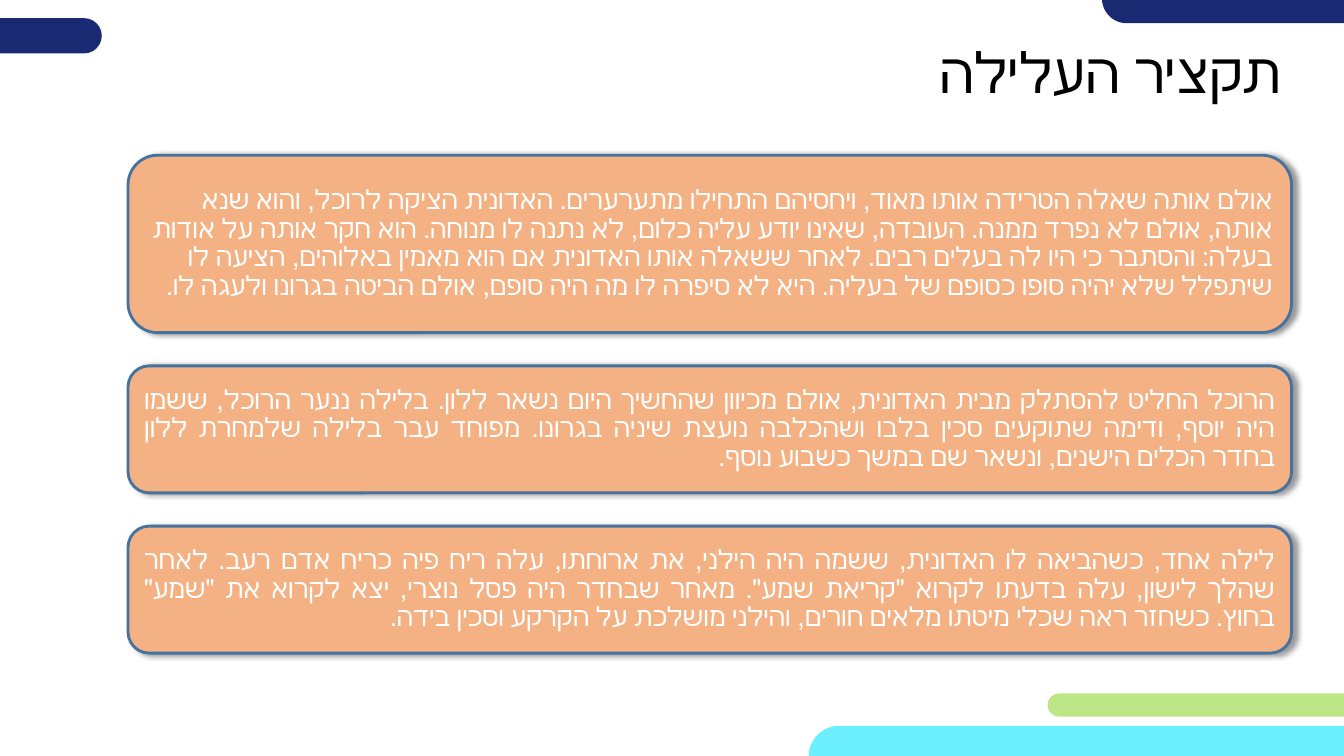
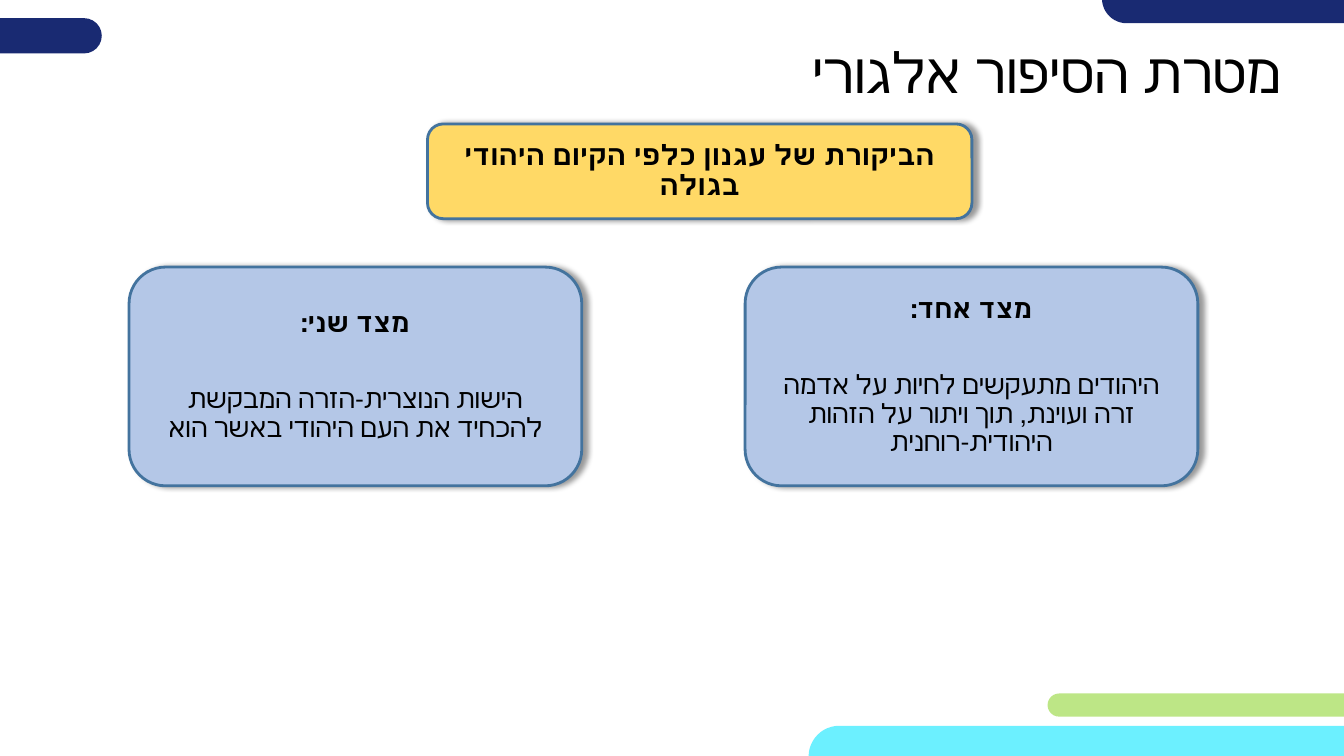
from dataclasses import dataclass

from lxml.etree import SubElement
from pptx import Presentation
from pptx.dml.color import RGBColor
from pptx.enum.lang import MSO_LANGUAGE_ID
from pptx.enum.shapes import MSO_SHAPE
from pptx.enum.text import MSO_ANCHOR, MSO_AUTO_SIZE, PP_ALIGN
from pptx.oxml.ns import qn
from pptx.util import Emu, Pt

EMU_PER_PX = 9144  # 100 px to the inch
TITLE_ONLY = 5


@dataclass(frozen=True)
class Theme:
    font: str = "Quicksand"
    title_size: int = 40
    lead_size: int = 20
    body_size: int = 19
    line_spacing: float = 0.9
    heading_gap: int = 34
    outline_width: int = 2
    black: str = "000000"
    white: str = "FFFFFF"
    navy: str = "192A72"
    cyan: str = "6CF0FF"
    green: str = "BDE686"
    outline: str = "43739E"
    orange: str = "F4B183"
    yellow: str = "FFD966"
    blue: str = "B4C7E7"


THEME = Theme()
TITLE_AREA = (767, 36, 514, 78)
BANDS = (
    (802, 720, 583, 61, THEME.cyan),
    (1039, 688, 334, 23, THEME.green),
    (1093, -26, 303, 49, THEME.navy),
    (-55, 18, 156, 35, THEME.navy),
)


def px(length):
    return Emu(length * EMU_PER_PX)


def write(paragraph, text, *, size=THEME.body_size, color=THEME.black,
          bold=False, align=PP_ALIGN.CENTER, space_after=0):
    """Write one right-to-left paragraph."""
    paragraph._p.get_or_add_pPr().set("rtl", "1")
    paragraph.alignment = align
    paragraph.line_spacing = THEME.line_spacing
    paragraph.space_before = Pt(0)
    paragraph.space_after = Pt(space_after)
    run = paragraph.add_run()
    run.text = text
    font = run.font
    font.name = THEME.font
    font.size = Pt(size)
    font.bold = bold
    font.color.rgb = RGBColor.from_string(color)
    font.language_id = MSO_LANGUAGE_ID.HEBREW


def add_shadow(shape):
    effects = shape._element.spPr.find(qn("a:effectLst"))
    shadow = SubElement(effects, qn("a:outerShdw"), blurRad=str(Pt(4)),
                        dist=str(Pt(3)), dir="0", algn="l", rotWithShape="0")
    color = SubElement(shadow, qn("a:srgbClr"), val=THEME.black)
    SubElement(color, qn("a:alpha"), val="40000")


class Deck:
    def __init__(self):
        self.presentation = Presentation()
        self.presentation.slide_width = px(1333)
        self.presentation.slide_height = px(750)
        self.slide = None

    def add_slide(self, title):
        layout = self.presentation.slide_layouts[TITLE_ONLY]
        self.slide = self.presentation.slides.add_slide(layout)
        self.title(title)
        for left, top, width, height, fill in BANDS:
            band = self.rounded(left, top, width, height, fill)
            band.adjustments[0] = 0.5
            band.line.fill.background()

    def title(self, text):
        shape = self.slide.shapes.title
        shape.left, shape.top, shape.width, shape.height = map(px, TITLE_AREA)
        frame = shape.text_frame
        frame.word_wrap = True
        frame.auto_size = MSO_AUTO_SIZE.NONE
        frame.vertical_anchor = MSO_ANCHOR.MIDDLE
        write(frame.paragraphs[0], text, size=THEME.title_size,
              align=PP_ALIGN.RIGHT)

    def rounded(self, left, top, width, height, fill):
        shape = self.slide.shapes.add_shape(
            MSO_SHAPE.ROUNDED_RECTANGLE, *map(px, (left, top, width, height)))
        shape.shadow.inherit = False
        shape.fill.solid()
        shape.fill.fore_color.rgb = RGBColor.from_string(fill)
        return shape

    def card(self, left, top, width, height, fill):
        """Add an outlined box with a shadow and return its text frame."""
        shape = self.rounded(left, top, width, height, fill)
        shape.line.color.rgb = RGBColor.from_string(THEME.outline)
        shape.line.width = Pt(THEME.outline_width)
        add_shadow(shape)
        frame = shape.text_frame
        frame.word_wrap = True
        frame.vertical_anchor = MSO_ANCHOR.MIDDLE
        return frame

    def save(self):
        self.presentation.save("out.pptx")


# Plot summary: three stacked cards
PLOT_CARDS = (
    (176, PP_ALIGN.RIGHT,
     "אולם אותה שאלה הטרידה אותו מאוד, ויחסיהם התחילו מתערערים. "
     "האדונית הציקה לרוכל, והוא שנא אותה, אולם לא נפרד ממנה. "
     "העובדה, שאינו יודע עליה כלום, לא נתנה לו מנוחה. "
     "הוא חקר אותה על אודות בעלה: והסתבר כי היו לה בעלים רבים. "
     "לאחר ששאלה אותו האדונית אם הוא מאמין באלוהים, הציעה לו "
     "שיתפלל שלא יהיה סופו כסופם של בעליה. "
     "היא לא סיפרה לו מה היה סופם, אולם הביטה בגרונו ולעגה לו."),
    (126, PP_ALIGN.JUSTIFY,
     "הרוכל החליט להסתלק מבית האדונית, אולם מכיוון שהחשיך היום נשאר ללון. "
     "בלילה ננער הרוכל, ששמו היה יוסף, ודימה שתוקעים סכין בלבו "
     "ושהכלבה נועצת שיניה בגרונו. מפוחד עבר בלילה שלמחרת ללון "
     "בחדר הכלים הישנים, ונשאר שם במשך כשבוע נוסף."),
    (126, PP_ALIGN.JUSTIFY,
     "לילה אחד, כשהביאה לו האדונית, ששמה היה הילני, את ארוחתו, "
     "עלה ריח פיה כריח אדם רעב. לאחר שהלך לישון, עלה בדעתו לקרוא "
     '"קריאת שמע". מאחר שבחדר היה פסל נוצרי, יצא לקרוא את "שמע" בחוץ. '
     "כשחזר ראה שכלי מיטתו מלאים חורים, והילני מושלכת על הקרקע "
     "וסכין בידה."),
)


def add_plot_slide(deck):
    deck.add_slide("תקציר העלילה")
    top, gap = 154, 33
    for height, align, text in PLOT_CARDS:
        frame = deck.card(127, top, 1154, height, THEME.orange)
        write(frame.paragraphs[0], text, color=THEME.white, align=align)
        top += height + gap


# Purpose of the allegory: one lead card above two sides
SIDES = (
    (739, "מצד אחד:",
     "היהודים מתעקשים לחיות על אדמה זרה ועוינת, "
     "תוך ויתור על הזהות היהודית-רוחנית"),
    (128, "מצד שני:",
     "הישות הנוצרית-הזרה המבקשת להכחיד את העם היהודי באשר הוא"),
)


def add_purpose_slide(deck):
    deck.add_slide("מטרת הסיפור אלגורי")
    lead = deck.card(424, 123, 540, 94, THEME.yellow)
    write(lead.paragraphs[0], "הביקורת של עגנון כלפי הקיום היהודי בגולה",
          size=THEME.lead_size, bold=True)
    for left, heading, text in SIDES:
        frame = deck.card(left, 265, 449, 217, THEME.blue)
        write(frame.paragraphs[0], heading, bold=True,
              space_after=THEME.heading_gap)
        write(frame.add_paragraph(), text)


def main():
    deck = Deck()
    add_plot_slide(deck)
    add_purpose_slide(deck)
    deck.save()


if __name__ == "__main__":
    main()
